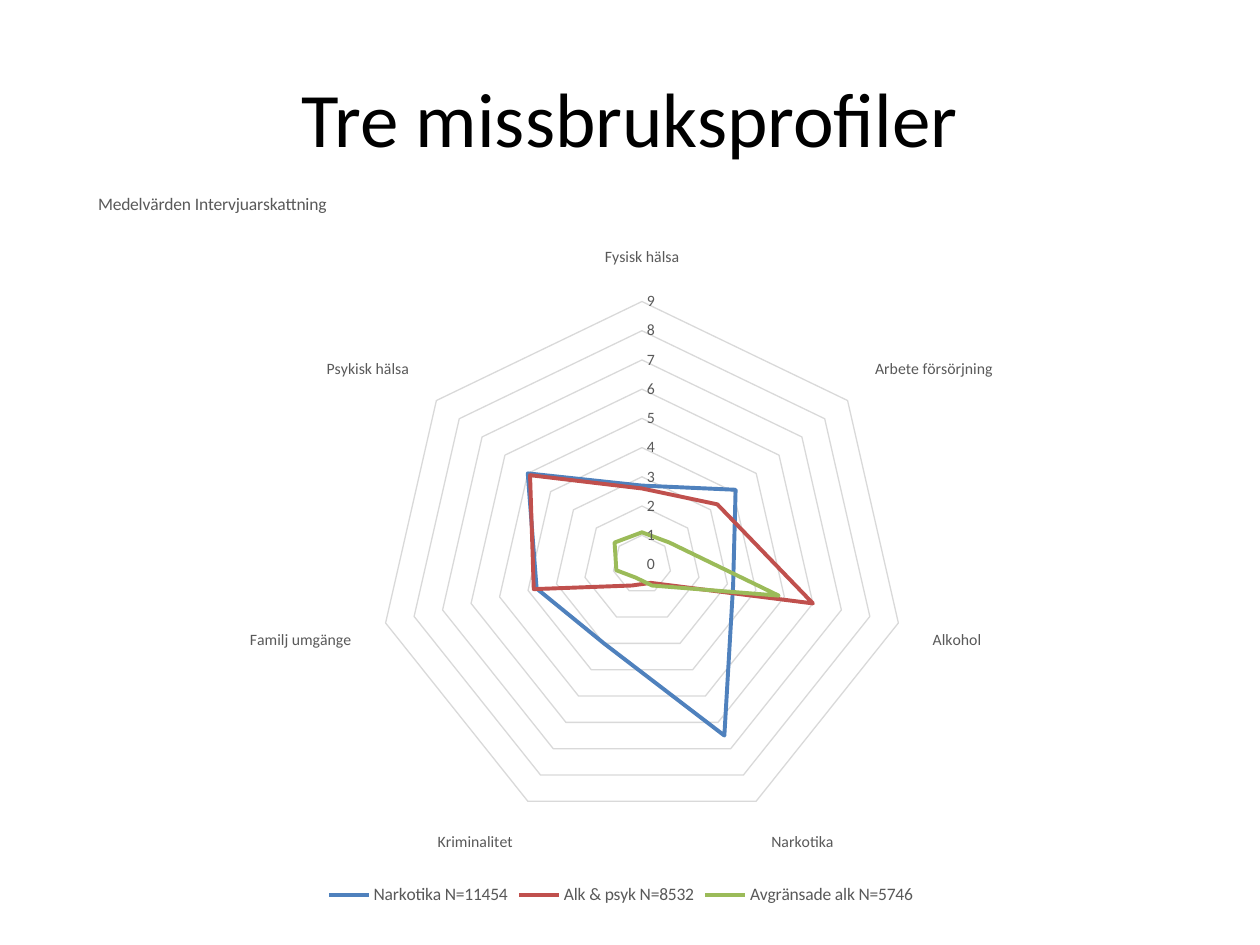
"""Builds a slide with a radar chart of three abuse profiles."""
from lxml import etree
from pptx import Presentation
from pptx import util as u
from pptx.chart.data import CategoryChartData
from pptx.dml.color import RGBColor
from pptx.enum import chart as charts, text
from pptx.oxml.ns import qn

COLORS = {"title": "000000", "label": "595959", "grid": "D9D9D9"}
FONT = "Calibri"
CATEGORIES = ["Fysisk hälsa", "Arbete försörjning", "Alkohol", "Narkotika",
              "Kriminalitet", "Familj umgänge", "Psykisk hälsa"]
PROFILES = [
    ("Narkotika N=11454", "4F81BD", [2.7, 4.1, 3.2, 6.5, 3, 3.7, 5]),
    ("Alk & psyk N=8532", "C0504D", [2.6, 3.3, 6, 0.7, 0.8, 3.8, 4.9]),
    ("Avgränsade alk N=5746", "9BBB59", [1.1, 1.2, 4.8, 0.8, 0.5, 0.9, 1.2]),
]


def px(length):
    """Turn pixels at 126 to the inch into EMU."""
    return u.Emu(round(length * 914400 / 126))


def assign(target, values):
    """Set each named attribute of the target."""
    for name, value in values.items():
        setattr(target, name, value)


def style_font(font, size, color):
    """Give a font its face, size and colour."""
    assign(font, {"name": FONT, "size": u.Pt(size), "bold": False})
    font.color.rgb = RGBColor.from_string(color)


def style_line(line, width, color):
    """Give a line its width and colour."""
    line.width = u.Pt(width)
    line.color.rgb = RGBColor.from_string(color)


def place_part(element, **values):
    """Write a manual layout, as fractions of the chart, into a chart part."""
    layout = element.find(qn("c:layout"))
    if layout is None:
        layout = etree.Element(qn("c:layout"))
        element.insert(0, layout)
    manual = etree.SubElement(layout, qn("c:manualLayout"))
    for name, value in values.items():
        etree.SubElement(manual, qn(f"c:{name}")).set("val", str(value))


def add_title(page, wording):
    """Fill and format the title placeholder."""
    title = page.shapes.title
    assign(title, {"left": px(63), "top": px(38), "width": px(1134), "height": px(158)})
    frame = title.text_frame
    assign(frame, {"text": wording, "word_wrap": True,
                   "vertical_anchor": text.MSO_ANCHOR.MIDDLE})
    para = frame.paragraphs[0]
    para.alignment = text.PP_ALIGN.CENTER
    style_font(para.runs[0].font, 44, COLORS["title"])


def style_axes(chart):
    """Format both axes, their labels and their gridlines."""
    for axis in (chart.category_axis, chart.value_axis):
        assign(axis, {"has_major_gridlines": True,
                      "major_tick_mark": charts.XL_TICK_MARK.NONE,
                      "minor_tick_mark": charts.XL_TICK_MARK.NONE})
        style_font(axis.tick_labels.font, 9, COLORS["label"])
        style_line(axis.major_gridlines.format.line, 0.75, COLORS["grid"])
    style_line(chart.category_axis.format.line, 0.75, COLORS["grid"])
    scale = chart.value_axis
    assign(scale, {"minimum_scale": 0, "maximum_scale": 9, "major_unit": 1})
    assign(scale.tick_labels, {"number_format": "0", "number_format_is_linked": False})
    scale.format.line.fill.background()


def add_chart_title(chart, wording):
    """Put the chart title in the upper left corner."""
    chart.has_title = True
    frame = chart.chart_title.text_frame
    frame.text = wording
    style_font(frame.paragraphs[0].runs[0].font, 10, COLORS["label"])
    place_part(chart.chart_title._element, xMode="edge", yMode="edge", x=0, y=0.02)


def add_radar(page):
    """Add the radar chart with one line per profile."""
    data = CategoryChartData()
    data.categories = CATEGORIES
    for name, _, values in PROFILES:
        data.add_series(name, values)
    chart = page.shapes.add_chart(charts.XL_CHART_TYPE.RADAR, px(95), px(175),
                                  px(1052), px(735), data).chart
    style_font(chart.font, 10, COLORS["title"])
    add_chart_title(chart, "Medelvärden Intervjuarskattning")
    style_axes(chart)
    plot = chart.plots[0]
    plot.vary_by_categories = False
    for series, (_, color, _) in zip(plot.series, PROFILES):
        series.smooth = False
        series.marker.style = charts.XL_MARKER_STYLE.NONE
        style_line(series.format.line, 2.25, color)
    chart.has_legend = True
    assign(chart.legend, {"position": charts.XL_LEGEND_POSITION.BOTTOM,
                          "include_in_layout": False})
    style_font(chart.legend.font, 10, COLORS["label"])
    place_part(chart._chartSpace.chart.plotArea, layoutTarget="inner", xMode="edge",
               yMode="edge", x=0.27, y=0.17, w=0.5, h=0.72)


def main():
    """Build and save the deck."""
    deck = Presentation()
    assign(deck, {"slide_width": px(1260), "slide_height": px(945)})
    page = deck.slides.add_slide(deck.slide_layouts[5])
    add_title(page, "Tre missbruksprofiler")
    add_radar(page)
    deck.save("out.pptx")


if __name__ == "__main__":
    main()
